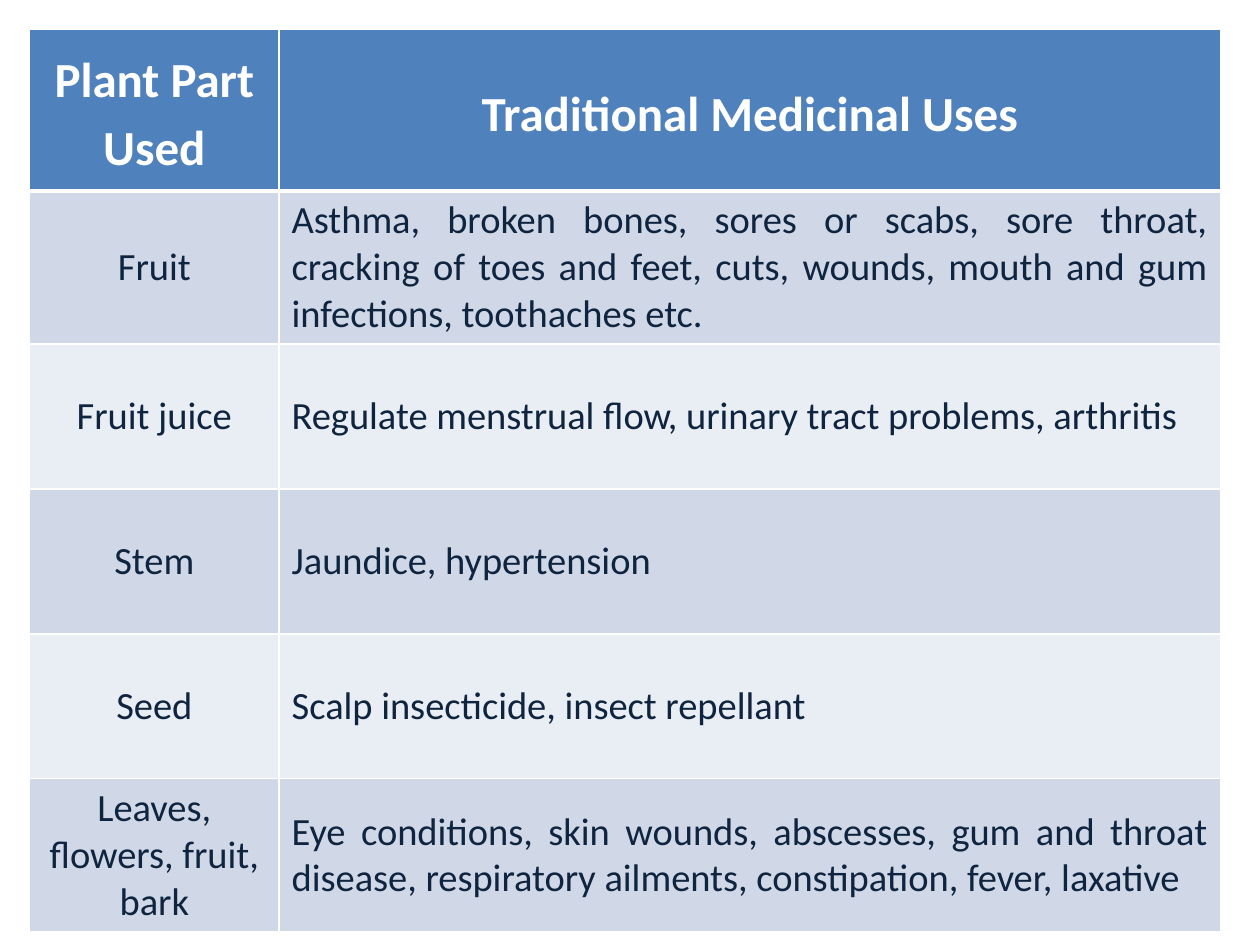
from lxml import etree
from pptx import Presentation
from pptx.dml.color import RGBColor
from pptx.enum.text import MSO_ANCHOR, PP_ALIGN
from pptx.oxml.ns import qn
from pptx.util import Inches, Pt

CENTER, JUSTIFY = PP_ALIGN.CENTER, PP_ALIGN.JUSTIFY
MIDDLE = MSO_ANCHOR.MIDDLE
WHITE = RGBColor(0xFF, 0xFF, 0xFF)
NAVY = RGBColor(0x0F, 0x24, 0x3E)
BLUE = RGBColor(0x4F, 0x81, 0xBD)
BANDS = [RGBColor(0xD0, 0xD8, 0xE8), RGBColor(0xE9, 0xED, 0xF4)]

# Content
HEADER = ("Plant Part Used", "Traditional Medicinal Uses")
USES = [
    ("Fruit", "Asthma, broken bones, sores or scabs, sore throat, cracking of "
              "toes and feet, cuts, wounds, mouth and gum infections, toothaches etc."),
    ("Fruit juice", "Regulate menstrual flow, urinary tract problems, arthritis"),
    ("Stem", "Jaundice, hypertension"),
    ("Seed", "Scalp insecticide, insect repellant"),
    ("Leaves, flowers, fruit, bark",
     "Eye conditions, skin wounds, abscesses, gum and throat disease, "
     "respiratory ailments, constipation, fever, laxative"),
]

# Grid, in inches
MARGIN = 0.235
COLUMN_WIDTHS = (1.98, 7.47)
HEADER_HEIGHT, ROW_HEIGHT = 1.28, 1.15
HEADER_INSET = 0.04


def write_text(cell, text, size=22, color=NAVY, bold=False, align=CENTER):
    cell.vertical_anchor = MIDDLE
    paragraph = cell.text_frame.paragraphs[0]
    paragraph.alignment = align
    run = paragraph.add_run()
    run.text = text
    run.font.name = "Calibri"
    run.font.size = Pt(size)
    run.font.bold = bold
    run.font.color.rgb = color
    return paragraph


def set_borders(cell, **widths):
    properties = cell._tc.get_or_add_tcPr()
    for index, side in enumerate("LRTB"):
        line = etree.Element(qn(f"a:ln{side}"), w=str(Pt(widths.get(side, 1))))
        fill = etree.SubElement(line, qn("a:solidFill"))
        etree.SubElement(fill, qn("a:srgbClr"), val=str(WHITE))
        properties.insert(index, line)


def fill_cell(cell, color):
    cell.fill.solid()
    cell.fill.fore_color.rgb = color


presentation = Presentation()
presentation.slide_width, presentation.slide_height = Inches(10), Inches(7.5)
slide = presentation.slides.add_slide(presentation.slide_layouts[6])

# Table
heights = [HEADER_HEIGHT] + [ROW_HEIGHT] * len(USES)
table = slide.shapes.add_table(
    len(heights), len(COLUMN_WIDTHS), Inches(MARGIN), Inches(MARGIN),
    Inches(sum(COLUMN_WIDTHS)), Inches(sum(heights))).table
for column, width in zip(table.columns, COLUMN_WIDTHS):
    column.width = Inches(width)
for row, height in zip(table.rows, heights):
    row.height = Inches(height)

# Header row
for cell, text in zip(table.rows[0].cells, HEADER):
    paragraph = write_text(cell, text, size=28, color=WHITE, bold=True)
    paragraph.line_spacing = 1.15
    paragraph.space_after = Pt(10)
    cell.margin_left = cell.margin_right = Inches(HEADER_INSET)
    cell.margin_top = cell.margin_bottom = Inches(HEADER_INSET)
    fill_cell(cell, BLUE)
    set_borders(cell, B=3)

# Body rows in alternating bands
for index, texts in enumerate(USES):
    cells = table.rows[index + 1].cells
    for cell, text, align in zip(cells, texts, (CENTER, JUSTIFY)):
        write_text(cell, text, align=align)
        fill_cell(cell, BANDS[index % 2])
        set_borders(cell, T=1 if index else 3)

presentation.save("out.pptx")
